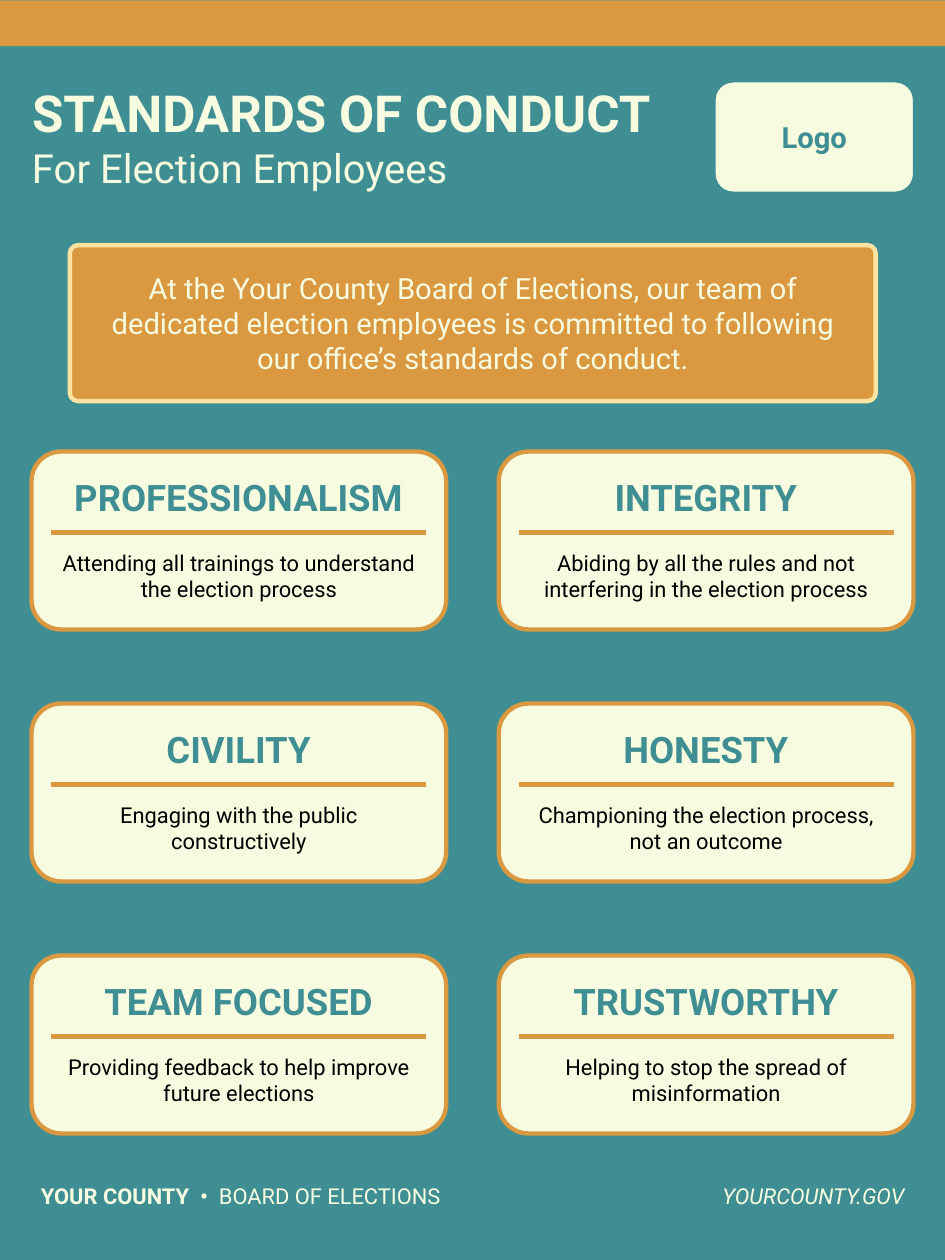
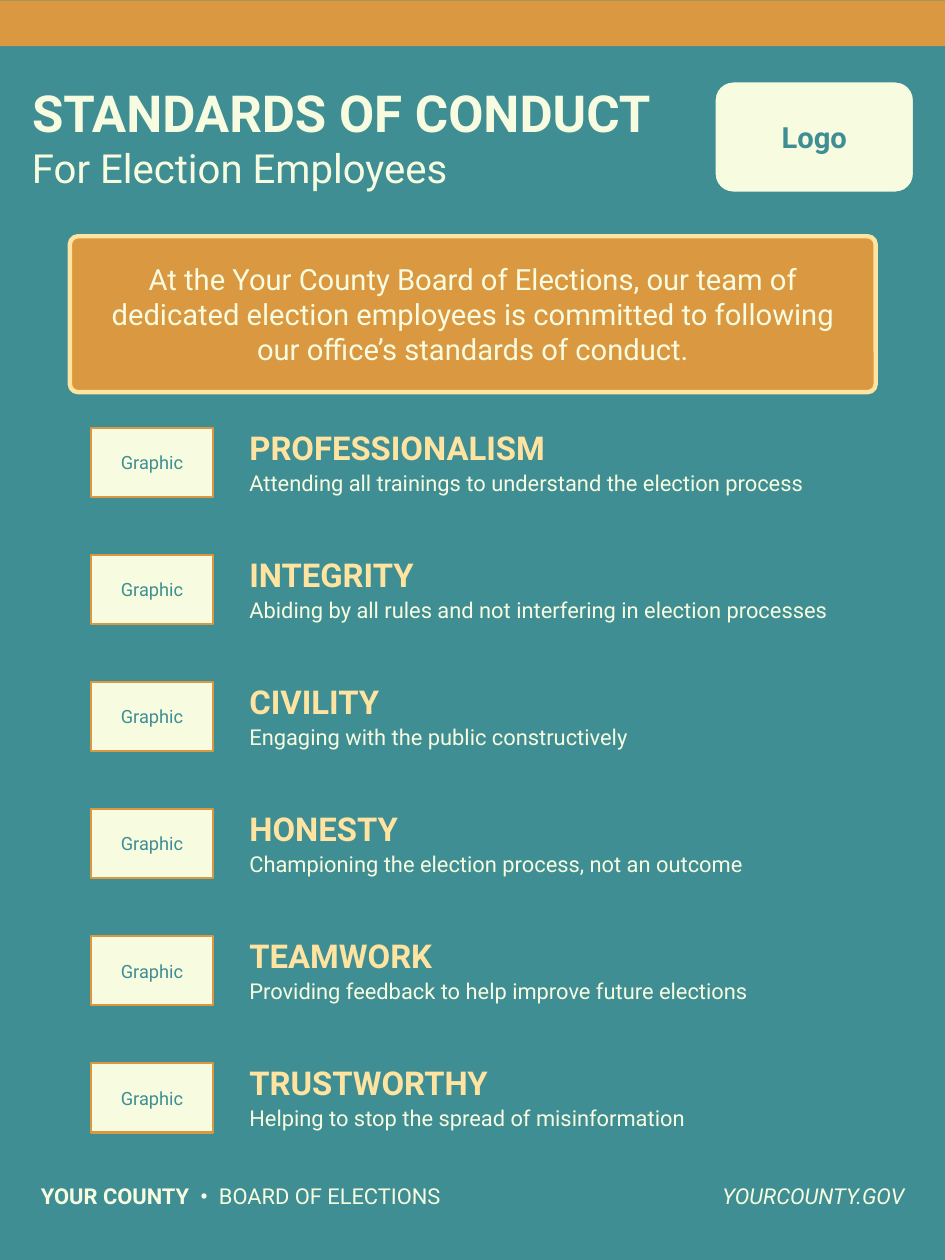
"""Build two posters on the standards of conduct for election employees."""
from dataclasses import dataclass
from typing import NamedTuple

from lxml import etree
from pptx import Presentation
from pptx import slide as sl
from pptx import util as u
from pptx.dml import color as c
from pptx.enum import shapes as es, text as et
from pptx.oxml import ns
from pptx.shapes import autoshape as au
from pptx.text import text as tx


@dataclass(frozen=True)
class Theme:
    font: str = "Roboto"
    teal: c.RGBColor = c.RGBColor(0x3F, 0x8E, 0x93)
    gold: c.RGBColor = c.RGBColor(0xDA, 0x98, 0x40)
    cream: c.RGBColor = c.RGBColor(0xF7, 0xFC, 0xE1)
    sand: c.RGBColor = c.RGBColor(0xFF, 0xE4, 0xA1)
    black: c.RGBColor = c.RGBColor(0, 0, 0)
    title: int = 70
    sub: int = 55
    card: int = 50
    row: int = 45
    lead: int = 40
    body: int = 30
    small: int = 25
    thick: int = 6
    thin: int = 3


class Box(NamedTuple):
    left: float
    top: float
    width: float
    height: float


class Style(NamedTuple):
    size: int
    ink: c.RGBColor
    bold: bool = False
    slant: bool = False
    align: et.PP_ALIGN = et.PP_ALIGN.LEFT
    anchor: et.MSO_ANCHOR = et.MSO_ANCHOR.TOP
    inset: float = 0


class Value(NamedTuple):
    name: str
    words: str


T = Theme()
MID = et.PP_ALIGN.CENTER
HALF = et.MSO_ANCHOR.MIDDLE

TITLE = Style(T.title, T.cream, bold=True)
SUB = Style(T.sub, T.cream)
LOGO = Style(T.lead, T.teal, bold=True, align=MID, anchor=HALF, inset=0.1)
LEAD = Style(T.lead, T.cream, align=MID, anchor=HALF, inset=0.7)
NOTE = Style(T.body, T.cream)
SITE = Style(T.body, T.cream, slant=True, align=et.PP_ALIGN.RIGHT)
CARD_HEAD = Style(T.card, T.teal, bold=True, align=MID, anchor=HALF, inset=0.1)
CARD_BODY = Style(T.body, T.black, align=MID, inset=0.1)
ROW_HEAD = Style(T.row, T.sand, bold=True)
GRAPHIC = Style(T.small, T.teal, align=MID, anchor=HALF, inset=0.1)

PLEDGE = ("At the Your County Board of Elections, our team of dedicated election employees "
          "is committed to following our office’s standards of conduct.")
CARDS = [
    Value("PROFESSIONALISM", "Attending all trainings to understand the election process"),
    Value("INTEGRITY", "Abiding by all the rules and not interfering in the election process"),
    Value("CIVILITY", "Engaging with the public constructively"),
    Value("HONESTY", "Championing the election process, not an outcome"),
    Value("TEAM FOCUSED", "Providing feedback to help improve future elections"),
    Value("TRUSTWORTHY", "Helping to stop the spread of misinformation"),
]
ROWS = [
    CARDS[0],
    Value("INTEGRITY", "Abiding by all rules and not interfering in election processes"),
    *CARDS[2:4],
    Value("TEAMWORK", CARDS[4].words),
    CARDS[5],
]


def span(box: Box) -> list[u.Length]:
    return [u.Inches(side) for side in box]


def dress(run: tx._Run, style: Style) -> None:
    font = run.font
    font.name, font.size = T.font, u.Pt(style.size)
    font.bold, font.italic = style.bold, style.slant
    font.color.rgb = style.ink


def write(frame: tx.TextFrame, words: str, style: Style) -> None:
    frame.text = words
    frame.word_wrap = True
    frame.auto_size = et.MSO_AUTO_SIZE.NONE
    frame.vertical_anchor = style.anchor
    frame.margin_left = frame.margin_right = u.Inches(style.inset)
    frame.margin_top = frame.margin_bottom = u.Inches(min(style.inset, 0.1))
    line = frame.paragraphs[0]
    line.alignment = style.align
    dress(line.runs[0], style)


def label(page: sl.Slide, box: Box, words: str, style: Style) -> tx.TextFrame:
    frame = page.shapes.add_textbox(*span(box)).text_frame
    write(frame, words, style)
    return frame


def panel(page: sl.Slide, box: Box, fill: c.RGBColor, edge: c.RGBColor | None = None,
          weight: int = 0, curve: float = 0) -> au.Shape:
    kind = es.MSO_SHAPE.ROUNDED_RECTANGLE if curve else es.MSO_SHAPE.RECTANGLE
    shape = page.shapes.add_shape(kind, *span(box))
    shape.shadow.inherit = False
    shape.fill.solid()
    shape.fill.fore_color.rgb = fill
    if curve:
        shape.adjustments[0] = curve
    if edge is None:
        shape.line.fill.background()
    else:
        shape.line.color.rgb = edge
        shape.line.width = u.Pt(weight)
    return shape


def rule(page: sl.Slide, left: float, top: float, width: float) -> None:
    ends = [u.Inches(n) for n in (left, top, left + width, top)]
    line = page.shapes.add_connector(es.MSO_CONNECTOR.STRAIGHT, *ends)
    line.line.color.rgb = T.gold
    line.line.width = u.Pt(T.thick)
    etree.SubElement(line._element.spPr, ns.qn("a:effectLst"))


def poster(page: sl.Slide, top: float) -> None:
    panel(page, Box(0, 0.01, 18, 0.87), T.gold)
    title = page.shapes.title
    title.left, title.top, title.width, title.height = span(Box(0.61, 1.55, 12.26, 1.09))
    write(title.text_frame, "STANDARDS OF CONDUCT", TITLE)
    label(page, Box(0.61, 2.73, 12.26, 0.87), "For Election Employees", SUB)
    logo = panel(page, Box(13.61, 1.55, 3.8, 2.12), T.cream, T.teal, T.thin, 0.167)
    write(logo.text_frame, "Logo", LOGO)
    pledge = panel(page, Box(1.33, top, 15.35, 2.97), T.gold, T.sand, T.thick, 0.052)
    write(pledge.text_frame, PLEDGE, LEAD)
    foot = label(page, Box(0.78, 22.53, 8.8, 0.5), "YOUR COUNTY  •  ", NOTE._replace(bold=True))
    board = foot.paragraphs[0].add_run()
    board.text = "BOARD OF ELECTIONS"
    dress(board, NOTE)
    label(page, Box(10.75, 22.53, 6.48, 0.5), "YOURCOUNTY.GOV", SITE)


def card(page: sl.Slide, left: float, top: float, value: Value) -> None:
    panel(page, Box(left, top, 7.9, 3.39), T.cream, T.gold, T.thick, 0.167)
    label(page, Box(left + 0.49, top + 0.39, 6.91, 0.96), value.name, CARD_HEAD)
    label(page, Box(left + 0.44, top + 1.76, 7.02, 1.21), value.words, CARD_BODY)
    rule(page, left + 0.38, top + 1.54, 7.14)


def row(page: sl.Slide, top: float, value: Value) -> None:
    graphic = panel(page, Box(1.73, top, 2.33, 1.32), T.cream, T.gold, T.thin)
    write(graphic.text_frame, "Graphic", GRAPHIC)
    label(page, Box(4.75, top, 6.91, 0.76), value.name, ROW_HEAD)
    label(page, Box(4.75, top + 0.79, 11.73, 0.5), value.words, NOTE)


def main() -> None:
    deck = Presentation()
    deck.slide_width, deck.slide_height = u.Inches(18), u.Inches(24)
    back = deck.slide_master.background.fill
    back.solid()
    back.fore_color.rgb = T.teal
    layout = deck.slide_layouts[5]

    page = deck.slides.add_slide(layout)
    poster(page, 4.67)
    for spot, value in enumerate(CARDS):
        down, across = divmod(spot, 2)
        card(page, 0.6 + 8.9 * across, 8.6 + 4.8 * down, value)

    page = deck.slides.add_slide(layout)
    poster(page, 4.5)
    for spot, value in enumerate(ROWS):
        row(page, 8.15 + 2.42 * spot, value)

    deck.save("out.pptx")


if __name__ == "__main__":
    main()
